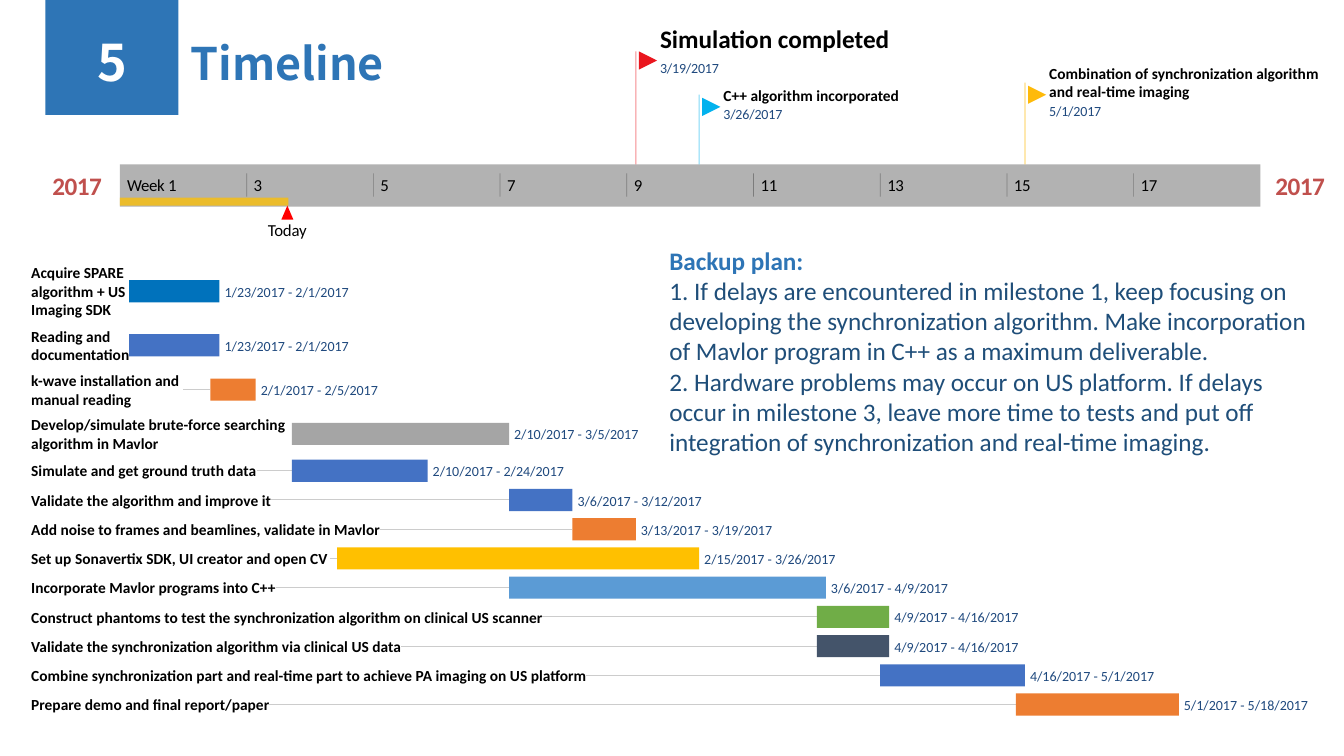
from pptx import Presentation
from pptx.dml.color import RGBColor
from pptx.enum.shapes import MSO_CONNECTOR, MSO_SHAPE
from pptx.enum.text import MSO_ANCHOR, MSO_AUTO_SIZE, PP_ALIGN
from pptx.oxml.ns import qn
from pptx.util import Inches, Pt
from lxml import etree

RECT, TRI, FLAG = MSO_SHAPE.RECTANGLE, MSO_SHAPE.ISOSCELES_TRIANGLE, MSO_SHAPE.FLOWCHART_MERGE
LINE = MSO_CONNECTOR.STRAIGHT
TOP, MID = MSO_ANCHOR.TOP, MSO_ANCHOR.MIDDLE
LEFT, CENTER = PP_ALIGN.LEFT, PP_ALIGN.CENTER
GROW = MSO_AUTO_SIZE.SHAPE_TO_FIT_TEXT

BLACK = RGBColor(0x00, 0x00, 0x00)
WHITE = RGBColor(0xFF, 0xFF, 0xFF)
RED = RGBColor(0xFF, 0x00, 0x00)
YEAR = RGBColor(0xC0, 0x50, 0x4D)
NAVY = RGBColor(0x1F, 0x49, 0x7E)
INK = RGBColor(0x1F, 0x4E, 0x79)
HEAD = RGBColor(0x2E, 0x75, 0xB6)
BAND = RGBColor(0xB2, 0xB2, 0xB2)
RULE = RGBColor(0xCC, 0xCC, 0xCC)
DEEP = RGBColor(0x00, 0x72, 0xBC)
BLUE = RGBColor(0x44, 0x72, 0xC4)
ORANGE = RGBColor(0xED, 0x7D, 0x31)
GRAY = RGBColor(0xA5, 0xA5, 0xA5)
GOLD = RGBColor(0xFF, 0xC0, 0x00)
SKY = RGBColor(0x5B, 0x9B, 0xD5)
GREEN = RGBColor(0x70, 0xAD, 0x47)
SLATE = RGBColor(0x44, 0x54, 0x6A)
FLAG_RED = RGBColor(0xEA, 0x16, 0x1E)
FLAG_BLUE = RGBColor(0x02, 0xB2, 0xEE)
FLAG_GOLD = RGBColor(0xFE, 0xBA, 0x0A)
SANS, NOTO = "Calibri", "Noto Sans CJK SC"

# Label, label width, lines, start, end, colour
TASKS = [
    ("Acquire SPARE algorithm + US Imaging SDK", 0.97, 3, "1/23", "2/1", DEEP),
    ("Reading and documentation", 0.97, 2, "1/23", "2/1", BLUE),
    ("k-wave installation and manual reading", 1.51, 2, "2/1", "2/5", ORANGE),
    ("Develop/simulate brute-force searching algorithm in Mavlor", 2.56, 2, "2/10", "3/5", GRAY),
    ("Simulate and get ground truth data", 2.24, 1, "2/10", "2/24", BLUE),
    ("Validate the algorithm and improve it", 2.38, 1, "3/6", "3/12", BLUE),
    ("Add noise to frames and beamlines, validate in Mavlor", 3.46, 1, "3/13", "3/19", ORANGE),
    ("Set up Sonavertix SDK, UI creator and open CV", 2.96, 1, "2/15", "3/26", GOLD),
    ("Incorporate Mavlor programs into C++", 2.43, 1, "3/6", "4/9", SKY),
    ("Construct phantoms to test the synchronization algorithm on clinical US scanner",
     5.07, 1, "4/9", "4/16", GREEN),
    ("Validate the synchronization algorithm via clinical US data", 3.67, 1, "4/9", "4/16", SLATE),
    ("Combine synchronization part and real-time part to achieve PA imaging on US platform",
     5.5, 1, "4/16", "5/1", BLUE),
    ("Prepare demo and final report/paper", 2.36, 1, "5/1", "5/18", ORANGE),
]
# Label, size, top, width, height, date, date top, pole top, flag top, colour
GOALS = [
    ("Simulation completed", 18, 0.19, 2.51, 0.39, "3/19", 0.59, 0.51, 0.51, FLAG_RED),
    ("C++ algorithm incorporated", 11, 0.85, 1.8, 0.19, "3/26", 1.05, 0.94, 0.97, FLAG_BLUE),
    ("Combination of synchronization algorithm and real-time imaging",
     11, 0.63, 2.74, 0.37, "5/1", 1.02, 0.82, 0.85, FLAG_GOLD),
]
WEEKS = ["Week 1", "3", "5", "7", "9", "11", "13", "15", "17"]
PLAN = [
    ("Backup plan:", HEAD, True),
    ("1. If delays are encountered in milestone 1, keep focusing on developing the synchronization "
     "algorithm. Make incorporation of Mavlor program in C++ as a maximum deliverable.", INK, False),
    ("2. Hardware problems may occur on US platform. If delays occur in milestone 3, leave more "
     "time to tests and put off integration of synchronization and real-time imaging.", INK, False),
]

# The time scale: the band covers 18 weeks from 1/22
X0, SPAN = 1.19, 11.31
DAY = SPAN / 126
MONTHS = [0, 31, 59, 90, 120]
BAND_Y, BAND_H = 1.63, 0.42
NOW = 2.85


def place(date, after=0):
    month, day = map(int, date.split("/"))
    return X0 + (MONTHS[month - 1] + day - 22 + after) * DAY


deck = Presentation()
deck.slide_width, deck.slide_height = Inches(13.33), Inches(7.5)
slide = deck.slides.add_slide(deck.slide_layouts[5])
parts = slide.shapes


def fade(item, share):
    for node in item._element.spPr.iter(qn("a:srgbClr")):
        etree.SubElement(node, qn("a:alpha")).set("val", str(share * 1000))


def block(kind, x, y, w, h, color):
    item = parts.add_shape(kind, Inches(x), Inches(y), Inches(w), Inches(h))
    item.shadow.inherit = False
    item.fill.solid()
    item.fill.fore_color.rgb = color
    item.line.fill.background()
    return item


def rule(x1, y1, x2, y2, color, width=0.75, share=100):
    item = parts.add_connector(LINE, Inches(x1), Inches(y1), Inches(x2), Inches(y2))
    item.line.color.rgb = color
    item.line.width = Pt(width)
    etree.SubElement(item._element.spPr, qn("a:effectLst"))
    if share < 100:
        fade(item, share)


def write(para, words, size, color, bold=False, font=SANS, gap=0):
    run = para.add_run()
    run.text = words
    run.font.name, run.font.size, run.font.bold = font, Pt(size), bold
    run.font.color.rgb = color
    if gap:
        run._r.get_or_add_rPr().set("spc", str(gap))


def text(x, y, w, h, words, size, color, bold=False, wrap=True, align=LEFT, gap=0):
    item = parts.add_textbox(Inches(x), Inches(y), Inches(w), Inches(h))
    frame = item.text_frame
    frame.margin_left = frame.margin_right = frame.margin_top = frame.margin_bottom = 0
    frame.word_wrap, frame.vertical_anchor = wrap, MID
    frame.paragraphs[0].alignment = align
    write(frame.paragraphs[0], words, size, color, bold, gap=gap)


def head(item, words, size, color, wrap):
    frame = item.text_frame
    frame.word_wrap, frame.vertical_anchor, frame.auto_size = wrap, TOP, GROW
    frame.paragraphs[0].alignment = LEFT
    write(frame.paragraphs[0], words, size, color, True, NOTO)


# Title and section number
title = parts.title
title.left, title.top, title.width, title.height = map(Inches, (1.79, 0.3, 3.95, 0.64))
head(title, "Timeline", 32, HEAD, True)
block(RECT, 0.45, 0, 1.32, 1.14, HEAD)
head(block(RECT, 0.87, 0.26, 0.51, 0.71, HEAD), "5", 36, WHITE, False)

# Time band
for x in (0.52, 12.65):
    text(x, 1.68, 0.49, 0.31, "2017", 18, YEAR, True, False, CENTER, -40)
block(RECT, X0, BAND_Y, SPAN, BAND_H, BAND)
fade(block(RECT, X0, 1.96, 1.67, 0.08, GOLD), 75)
block(TRI, NOW - 0.06, 2.04, 0.12, 0.14, RED)
text(NOW - 0.2, 2.18, 0.4, 0.2, "Today", 12, BLACK, False, False, CENTER, -10)
for i, week in enumerate(WEEKS):
    x = X0 + i * 14 * DAY
    if i:
        rule(x, 1.72, x, 1.95, BLACK, 0.5, 30)
    text(x + 0.07, 1.73, 0.51, 0.2, week, 12, BLACK, wrap=False, gap=-20)

# Milestones
for name, size, y, w, h, date, date_y, pole, flag, color in GOALS:
    x = place(date, 1)
    rule(x, pole, x, BAND_Y, color, share=50)
    block(FLAG, x + 0.03, flag, 0.18, 0.18, color).rotation = 270
    text(x + 0.24, y, w, h, name, size, BLACK, True)
    text(x + 0.24, date_y, 0.7, 0.17, date + "/2017", 10, NAVY, gap=-10)

# Task rows: each label box has a little slack so that its lines hold
EDGE, SLACK, BAR, ROW, GAP = 0.31, 0.1, 0.22, 0.19, 0.07
top = 2.61
for name, w, lines, start, end, color in TASKS:
    high = max(BAR, lines * ROW - 0.01)
    mid = top + high / 2
    x1, x2 = place(start), place(end, 1)
    if x1 - EDGE - w > 0.05:
        rule(EDGE + w, mid, x1, mid, RULE)
    block(RECT, x1, mid - BAR / 2, x2 - x1, BAR, color)
    text(EDGE, mid - lines * ROW / 2, w + SLACK, lines * ROW, name, 11, BLACK, True)
    dates = f"{start}/2017 - {end}/2017"
    text(x2 + 0.05, mid - 0.08, 1.32, 0.17, dates, 10, NAVY, wrap=False)
    top += high + GAP

# Backup plan
frame = parts.add_textbox(Inches(6.54), Inches(2.38), Inches(6.6), Inches(2.22)).text_frame
frame.word_wrap, frame.auto_size = True, GROW
for i, (words, color, bold) in enumerate(PLAN):
    para = frame.add_paragraph() if i else frame.paragraphs[0]
    write(para, words, 18, color, bold)

deck.save("out.pptx")
